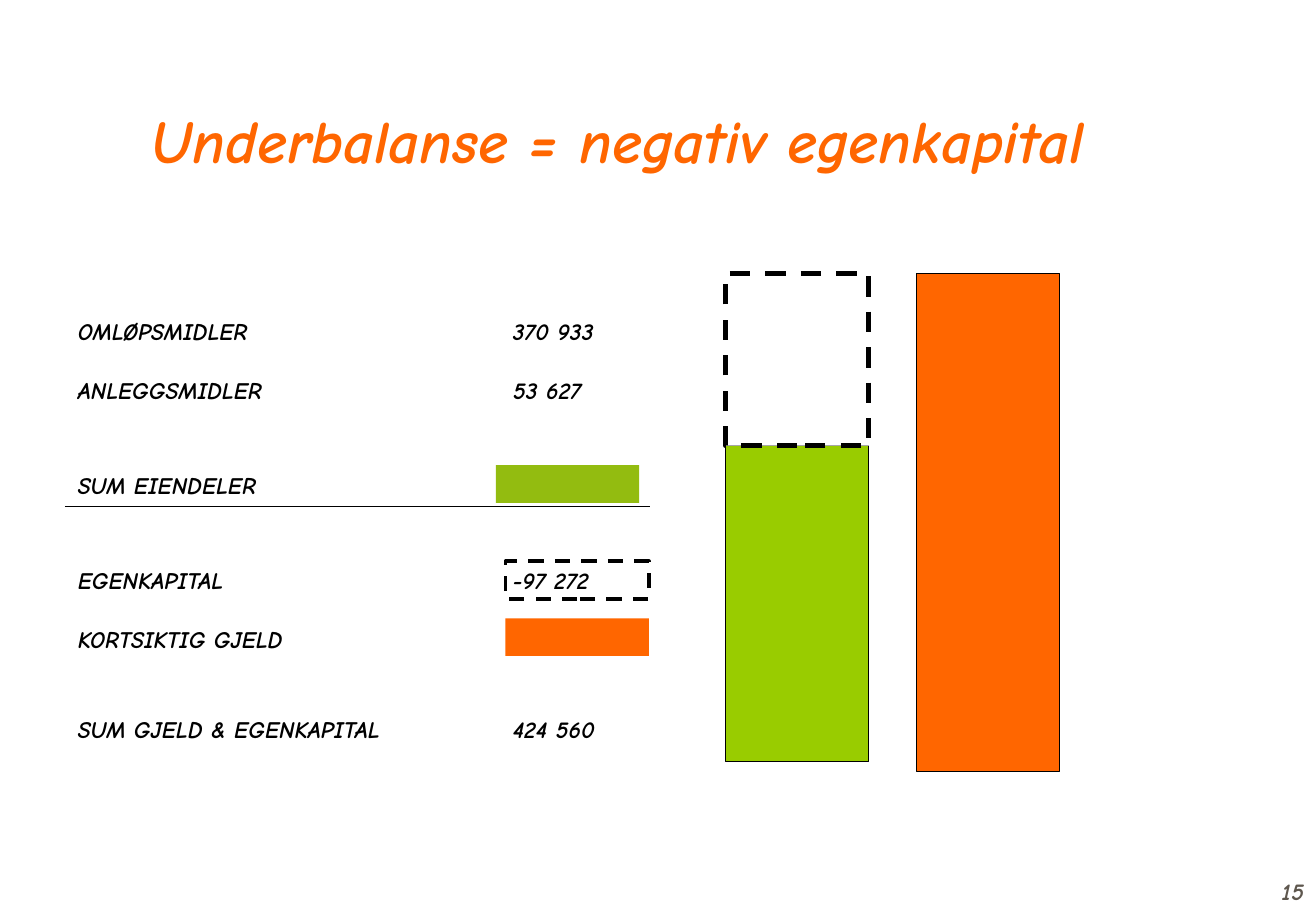
"""Build the slide on negative equity: balance table and matching bars."""
import pptx
import pptx.util
import pptx.dml.color
import pptx.enum.dml
import pptx.enum.shapes
import pptx.enum.text
import pptx.oxml
import pptx.oxml.ns

Inches, Pt = pptx.util.Inches, pptx.util.Pt
RGB = pptx.dml.color.RGBColor.from_string
ALIGN = pptx.enum.text.PP_ALIGN
BOTTOM = pptx.enum.text.MSO_ANCHOR.BOTTOM
COLORS = {"orange": "FF6600", "lime": "99CC00", "green": "93BC10",
          "black": "000000", "white": "FFFFFF", "gray": "5E574E"}


def style(para, size, color, align=None):
    para.alignment = align
    font = para.font
    font.name, font.size = "Comic Neue", Pt(size)
    font.bold = font.italic = True
    font.color.rgb = RGB(COLORS[color])


deck = pptx.Presentation()
deck.slide_width, deck.slide_height = Inches(10.83), Inches(7.5)
slide = deck.slides.add_slide(deck.slide_layouts[5])
shapes = slide.shapes

title = shapes.title
title.left, title.top = Inches(0.48), Inches(0.25)
title.width, title.height = Inches(9.21), Inches(1.25)
title.text_frame.text = "Underbalanse = negativ egenkapital"
title.text_frame.vertical_anchor = BOTTOM
style(title.text_frame.paragraphs[0], 36, "orange", ALIGN.CENTER)

rows = [
    (0.49, "OMLØPSMIDLER", "370 933"),
    (0.49, "ANLEGGSMIDLER", "53 627"),
    (0.37, "", ""),
    (0.41, "SUM EIENDELER", ""),
    (0.37, "", ""),
    (0.41, "EGENKAPITAL", "-97 272"),
    (0.49, "KORTSIKTIG GJELD", ""),
    (0.37, "", ""),
    (0.37, "SUM GJELD & EGENKAPITAL", "424 560"),
]
rules = {3: "lnB", 4: "lnT"}
table = shapes.add_table(len(rows), 2, Inches(0.54), Inches(2.41),
                         Inches(4.8), Inches(3.78)).table
table.first_row = table.horz_banding = False
table.columns[0].width, table.columns[1].width = Inches(3.58), Inches(1.22)
for r, (height, *texts) in enumerate(rows):
    table.rows[r].height = Inches(height)
    for c, text in enumerate(texts):
        cell = table.cell(r, c)
        cell.text = text
        cell.vertical_anchor = BOTTOM
        cell.margin_top = 0
        style(cell.text_frame.paragraphs[0], 14, "black")
        if r in rules:
            props = cell._tc.get_or_add_tcPr()
            props.append(pptx.oxml.parse_xml(
                f'<a:{rules[r]} {pptx.oxml.ns.nsdecls("a")} w="12700"><a:solidFill>'
                f'<a:srgbClr val="{COLORS["black"]}"/></a:solidFill></a:{rules[r]}>'))
        cell.fill.background()

number = shapes.add_textbox(Inches(10.11), Inches(7), Inches(0.72), Inches(0.5))
frame = number.text_frame
frame.word_wrap = True
frame.vertical_anchor = BOTTOM
frame.text = "15"
style(frame.paragraphs[0], 14, "gray", ALIGN.RIGHT)

boxes = [
    (7.54, 2.25, 4.1, "orange", 0.75, False),
    (4.16, 5.09, 0.31, "orange", 0, False),
    (5.97, 3.67, 2.6, "lime", 0.75, False),
    (4.08, 3.83, 0.31, "green", 0, False),
    (5.97, 2.25, 1.42, "white", 3, True),
    (4.16, 4.62, 0.31, None, 2.25, True),
]
for left, top, height, fill, weight, dashed in boxes:
    box = shapes.add_shape(pptx.enum.shapes.MSO_SHAPE.RECTANGLE, Inches(left),
                           Inches(top), Inches(1.18), Inches(height))
    box.shadow.inherit = False
    if fill:
        box.fill.solid()
        box.fill.fore_color.rgb = RGB(COLORS[fill])
    else:
        box.fill.background()
    if weight:
        box.line.color.rgb = RGB(COLORS["black"])
        box.line.width = Pt(weight)
    else:
        box.line.fill.background()
    if dashed:
        box.line.dash_style = pptx.enum.dml.MSO_LINE.DASH

deck.save("out.pptx")
